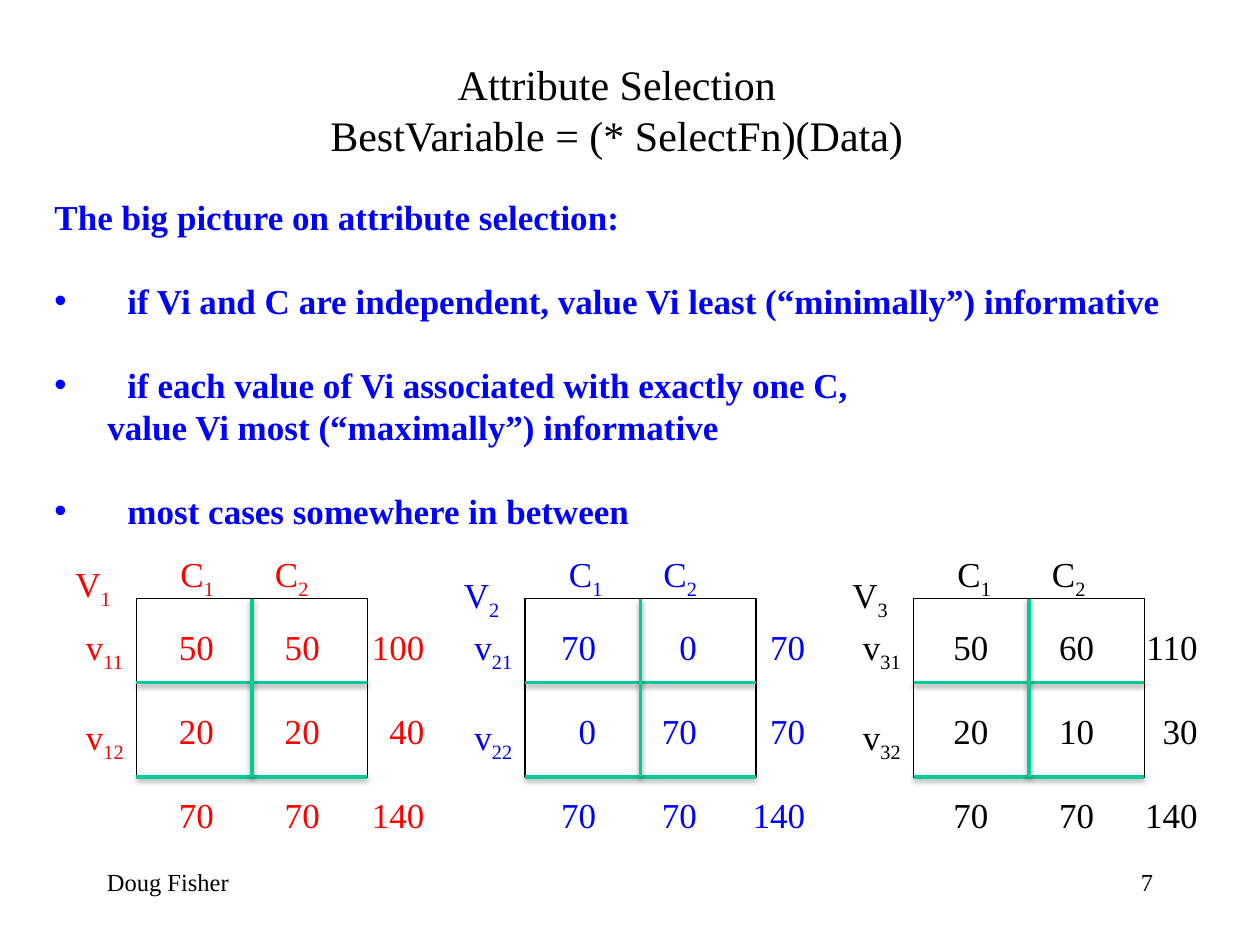
from lxml import etree
from pptx import Presentation
from pptx.dml.color import RGBColor
from pptx.enum.shapes import MSO_CONNECTOR, MSO_SHAPE
from pptx.enum.text import PP_ALIGN
from pptx.oxml import parse_xml
from pptx.oxml.ns import nsdecls, qn
from pptx.util import Inches, Pt

LEFT, CENTER, RIGHT = PP_ALIGN.LEFT, PP_ALIGN.CENTER, PP_ALIGN.RIGHT
STRAIGHT, RECTANGLE = MSO_CONNECTOR.STRAIGHT, MSO_SHAPE.RECTANGLE

THEME = {
    "font": "Times New Roman",
    "title": 24, "body": 20, "footer": 14,
    "black": RGBColor(0, 0, 0),
    "blue": RGBColor(0, 0, 255),
    "red": RGBColor(255, 0, 0),
    "green": RGBColor(0, 204, 153),
}

# The slide is a grid of 120 columns by 90 rows
UNIT = Inches(1) // 12
COLUMNS, ROWS = 120, 90

prs = Presentation()
prs.slide_width, prs.slide_height = COLUMNS * UNIT, ROWS * UNIT
slide = prs.slides.add_slide(prs.slide_layouts[6])


def add_text(column, row, width, height, lines, color="black", size="body",
             bold=False, align=LEFT, gap=0, tabs=(), tab_align="l"):
    """Add a text box; every second part of a line split at | is a subscript."""
    box = slide.shapes.add_textbox(*(int(n * UNIT) for n in (column, row, width, height)))
    box.text_frame.word_wrap = True
    for index, line in enumerate(lines):
        paragraph = box.text_frame.paragraphs[0] if index == 0 else box.text_frame.add_paragraph()
        paragraph.alignment = align
        paragraph.space_before = Pt(gap if index else 0)
        for part, words in enumerate(line.split("|")):
            run = paragraph.add_run()
            run.text = words
            style = {"name": THEME["font"], "size": Pt(THEME[size]), "bold": bold}
            for key, value in style.items():
                setattr(run.font, key, value)
            run.font.color.rgb = THEME[color]
            if part % 2:
                run._r.get_or_add_rPr().set("baseline", "-25000")
        if tabs:
            stops = etree.SubElement(paragraph._p.get_or_add_pPr(), qn("a:tabLst"))
            for stop in tabs:
                etree.SubElement(stops, qn("a:tab"), pos=str(Inches(stop)), algn=tab_align)
    return box.text_frame.paragraphs


def add_divider(start, end):
    """Add a green line with a soft shadow below it."""
    divider = slide.shapes.add_connector(STRAIGHT, *(int(n * UNIT) for n in start + end))
    divider.line.color.rgb = THEME["green"]
    divider.line.width = Pt(2)
    divider._element.spPr.append(parse_xml(
        f'<a:effectLst {nsdecls("a")}><a:outerShdw blurRad="{Pt(3.1)}" dist="{Pt(1.6)}" '
        'dir="5400000" rotWithShape="0"><a:srgbClr val="000000"><a:alpha val="38000"/>'
        '</a:srgbClr></a:outerShdw></a:effectLst>'))
    return divider


# Footer
add_text(9, 82, 25, 6, ["Doug Fisher"], size="footer")
add_text(86, 82, 25, 6, ["7"], size="footer", align=RIGHT)

# Title
add_text(30, 5, 57.5, 11, ["Attribute Selection", "BestVariable = (* SelectFn)(Data)"],
         size="title", align=CENTER)

# Main points: left margin and first-line indent in inches, and whether bulleted
points = [
    ("The big picture on attribute selection:", 0, 0, False),
    ("if Vi and C are independent, value Vi least (“minimally”) informative", 0.58, -0.58, True),
    ("if each value of Vi associated with exactly one C,", 0.58, -0.58, True),
    ("value Vi most (“maximally”) informative", 0.42, 0, False),
    ("most cases somewhere in between", 0.58, -0.58, True),
]
point_lines = add_text(4, 18, 116, 33.5, [point[0] for point in points],
                       color="blue", bold=True, gap=24)
for line, (_, margin, indent, bulleted) in zip(point_lines, points):
    properties = line._p.get_or_add_pPr()
    properties.set("marL", str(Inches(margin)))
    properties.set("indent", str(Inches(indent)))
    if bulleted:
        etree.SubElement(properties, qn("a:buFont"), typeface="Arial")
        etree.SubElement(properties, qn("a:buChar"), char="•")
    elif margin:
        line.space_before = Pt(0)

# Contingency tables: colour, row of the variable's name, counts, tab stops in inches
matrices = [
    ("red", 53, [(50, 50, 100), (20, 20, 40), (70, 70, 140)], (0.35, 1.19, 2.02)),
    ("blue", 54, [(70, 0, 70), (0, 70, 70), (70, 70, 140)], (0.3, 1.1, 1.96)),
    ("black", 54, [(50, 60, 110), (20, 10, 30), (70, 70, 140)], (0.33, 1.17, 1.99)),
]
FIRST, STEP, TOP, WIDTH, HEIGHT = 13, 37, 57, 22, 17

for number, (color, name_row, counts, stops) in enumerate(matrices, start=1):
    left = FIRST + (number - 1) * STEP
    right, bottom, middle = left + WIDTH, TOP + HEIGHT, left + WIDTH / 2

    # Frame and dividers
    frame = slide.shapes.add_shape(RECTANGLE, left * UNIT, TOP * UNIT, WIDTH * UNIT, HEIGHT * UNIT)
    frame.shadow.inherit = False
    frame.fill.background()
    frame.line.color.rgb = THEME["black"]
    frame.line.width = Pt(0.75)
    for divider_row in (TOP + 8, bottom):
        add_divider((left, divider_row), (right, divider_row))
    upright = add_divider((middle, TOP), (middle, bottom))
    upright.begin_connect(frame, 0)
    upright.end_connect(frame, 2)

    # Variable, its values, classes and counts
    add_text(left - 7, name_row, 6, 5.25, [f"V|{number}"], color)
    add_text(left - 6, 59, 28, 13.3, [f"v|{number}{value}" for value in (1, 2)], color, gap=24)
    add_text(left + 3, 52, 15, 5.25, ["C|1|\tC|2"], color, tabs=[0.75])
    add_text(left + 2, 59, 29, 21.4, ["\t" + "\t".join(map(str, line)) for line in counts],
             color, gap=24, tabs=stops, tab_align="r")

prs.save("out.pptx")
